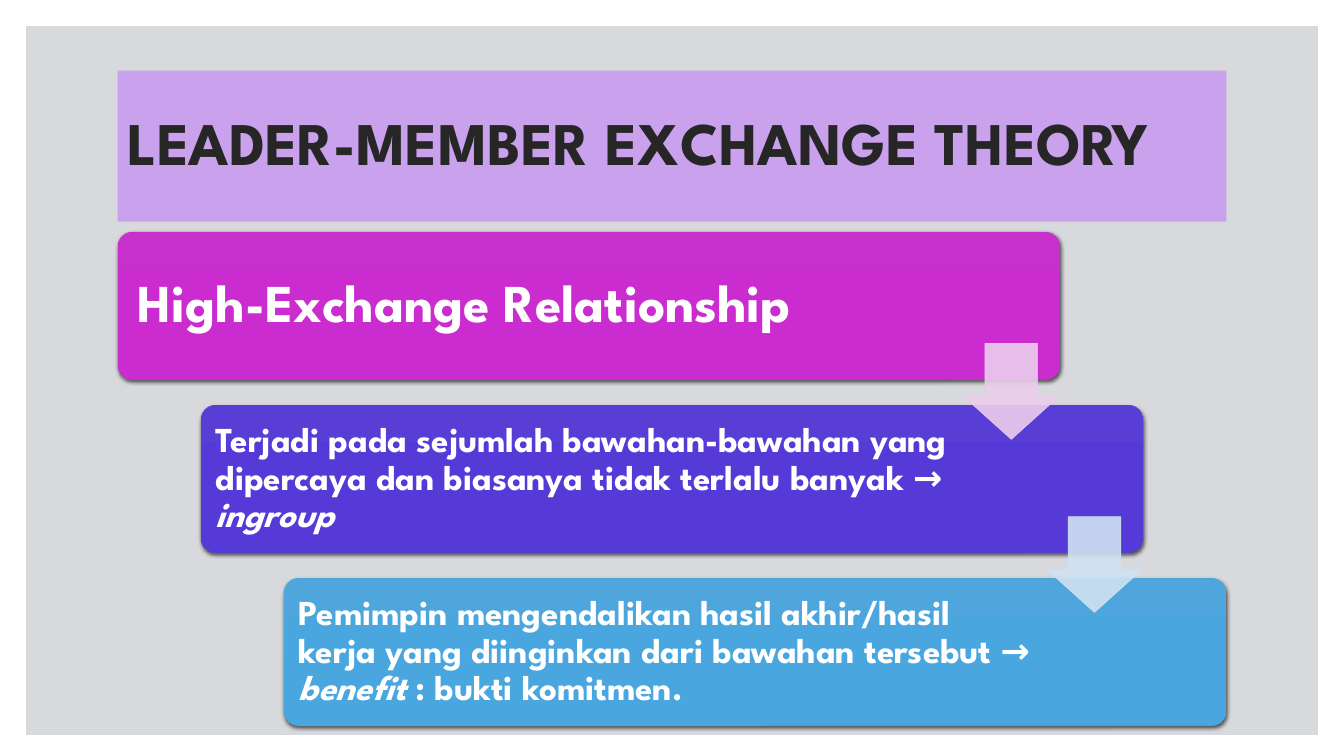
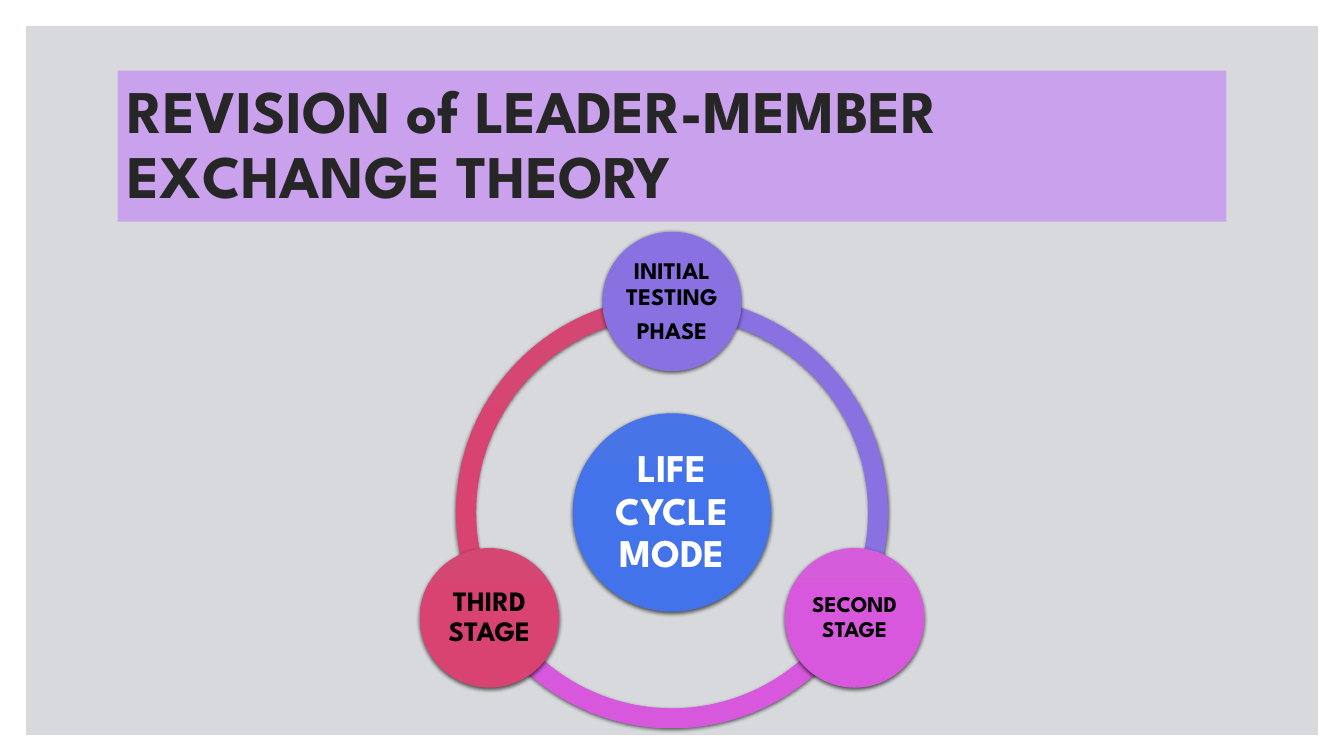
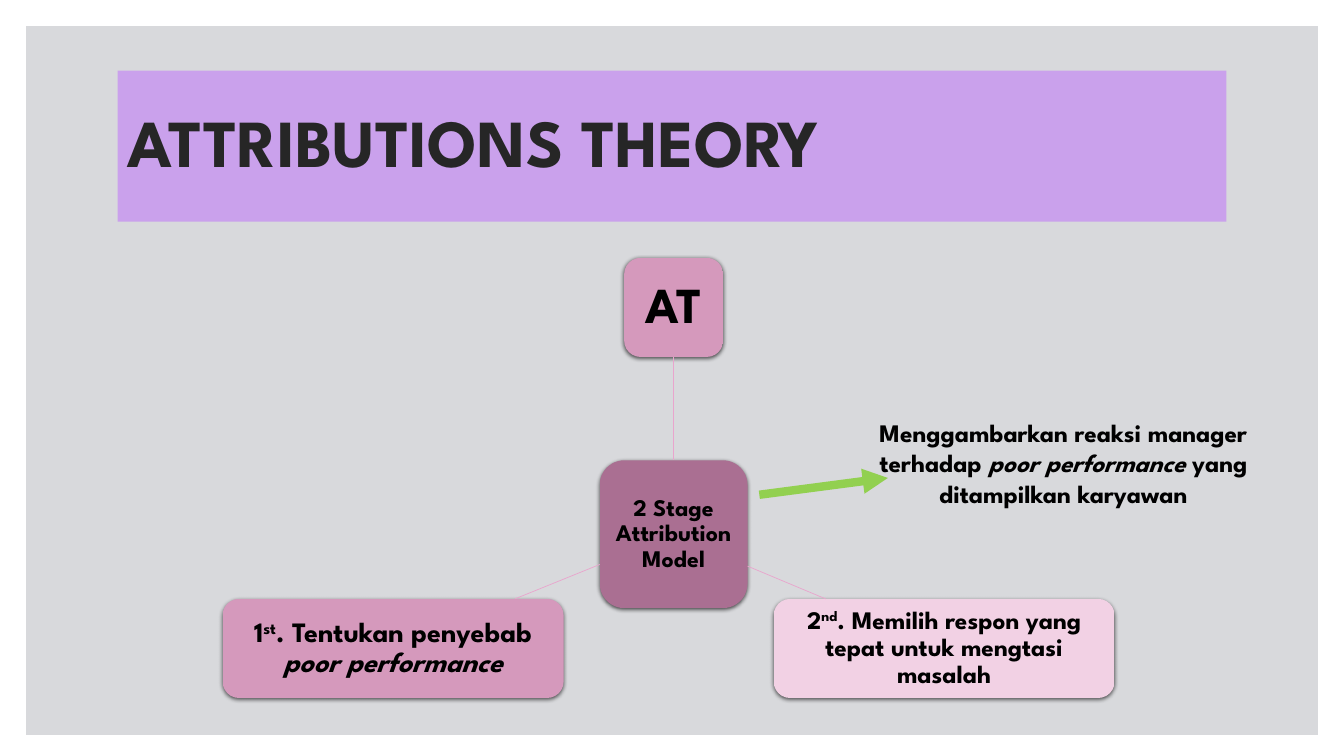
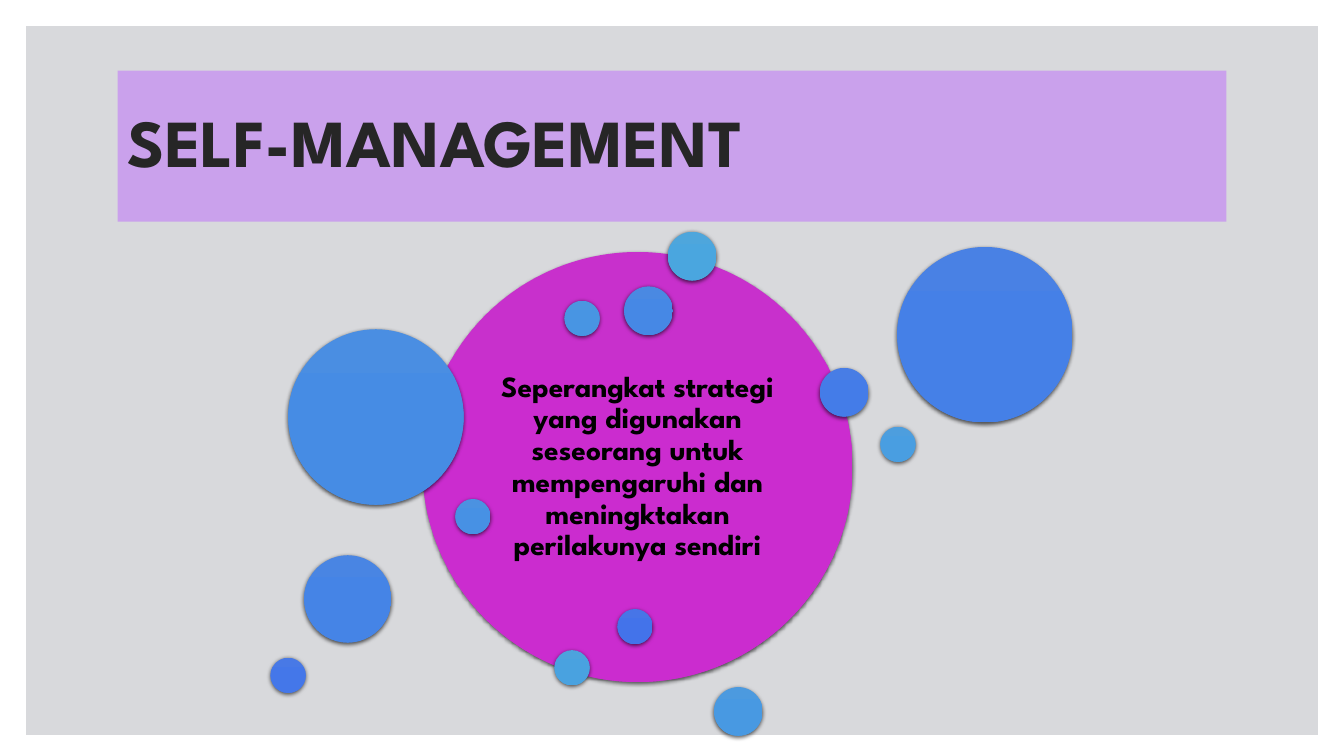
from math import cos, radians, sin

from lxml.etree import SubElement
from pptx import Presentation
from pptx.dml.color import RGBColor
from pptx.enum.shapes import MSO_CONNECTOR as Connector, MSO_SHAPE as Shape
from pptx.enum.text import MSO_ANCHOR as Anchor, PP_ALIGN as Align
from pptx.oxml.ns import qn
from pptx.util import Inches, Pt

FONT = "League Spartan"
COLUMNS, ROWS = 160, 90
BLANK_LAYOUT = 6

COLORS = {
    "panel": "D8D9DC",
    "title_band": "CAA1EC",
    "title_text": "262626",
    "white": "FFFFFF",
    "black": "000000",
    "pink_line": "E9A5CD",
    "green": "92D050",
    "pale_magenta": "EBCDEC",
    "pale_blue": "D0E1F2",
}

# Top colour and the colour from the middle down.
GRADIENTS = {
    "magenta": ("C830CC", "CB2CCF"),
    "indigo": ("593ED5", "563AD8"),
    "sky": ("4EA6DC", "4AA6DF"),
    "blue": ("4775E7", "4373EA"),
    "violet": ("8971E1", "876EE3"),
    "orchid": ("D55CDB", "D758DD"),
    "red": ("D54773", "D84371"),
    "plum": ("AA6F92", "AB6D92"),
    "rose": ("D599BC", "D697BB"),
    "blush": ("F2D1E4", "F2CFE3"),
}


def blend(first, last, share):
    """Return the hex colour that lies the given share of the way from first to last."""
    pairs = zip(RGBColor.from_string(first), RGBColor.from_string(last))
    return str(RGBColor(*(round(a + (b - a) * share) for a, b in pairs)))


class Deck:
    """Holds the style and the current slide; lengths are grid columns and rows."""

    def __init__(self):
        self.presentation = Presentation()
        self.presentation.slide_width = Inches(13.33)
        self.presentation.slide_height = Inches(7.5)
        self.column = self.presentation.slide_width / COLUMNS
        self.row = self.presentation.slide_height / ROWS
        self.slide = None

    def place(self, left, top, width, height):
        return (round(left * self.column), round(top * self.row),
                round(width * self.column), round(height * self.row))

    def new_slide(self, title, size):
        layout = self.presentation.slide_layouts[BLANK_LAYOUT]
        self.slide = self.presentation.slides.add_slide(layout)
        self.flat(Shape.RECTANGLE, (3.1, 3.1, 153.8, 84.4), "panel")
        band = self.flat(Shape.RECTANGLE, (14, 8.4, 132, 18), "title_band")
        self.add_text(band, [[title]], size, "title_text", Align.LEFT)

    def shape(self, kind, box, adjustments=()):
        shape = self.slide.shapes.add_shape(kind, *self.place(*box))
        for index, value in enumerate(adjustments):
            shape.adjustments[index] = value
        shape.shadow.inherit = False
        shape.line.fill.background()
        return shape

    def flat(self, kind, box, color, adjustments=()):
        shape = self.shape(kind, box, adjustments)
        shape.fill.solid()
        shape.fill.fore_color.rgb = RGBColor.from_string(COLORS[color])
        return shape

    def glossy(self, kind, box, gradient, adjustments=()):
        """Add a shape with a vertical gradient and a soft shadow."""
        shape = self.shape(kind, box, adjustments)
        shape.fill.gradient()
        shape.fill.gradient_angle = 270
        for stop, color, position in zip(shape.fill.gradient_stops, gradient, (0, 0.5)):
            stop.color.rgb = RGBColor.from_string(color)
            stop.position = position
        effects = shape._element.spPr.find(qn("a:effectLst"))
        shadow = SubElement(effects, qn("a:outerShdw"), blurRad=str(int(Pt(3))),
                            dist=str(int(Pt(1))), dir="5400000", rotWithShape="0")
        color = SubElement(shadow, qn("a:srgbClr"), val=COLORS["black"])
        SubElement(color, qn("a:alpha"), val="63000")
        return shape

    def circle(self, center, diameter, gradient):
        left, top = (middle - diameter / 2 for middle in center)
        return self.glossy(Shape.OVAL, (left, top, diameter, diameter), gradient)

    def down_arrow(self, left, top, size, color):
        arrow = self.flat(Shape.DOWN_ARROW, (left, top, size, size), color, (0.55, 0.45))
        arrow.line.color.rgb = RGBColor.from_string(COLORS[color])
        arrow.line.width = Pt(0.5)
        for element in list(arrow._element.spPr.iter(qn("a:srgbClr"))):
            SubElement(element, qn("a:alpha"), val="90000")

    def connector(self, start, end, color, width, arrowhead=False):
        left, top, right, bottom = self.place(*start, *end)
        line = self.slide.shapes.add_connector(Connector.STRAIGHT, left, top, right, bottom)
        line.line.color.rgb = RGBColor.from_string(COLORS[color])
        line.line.width = Pt(width)
        properties = line._element.spPr
        if arrowhead:
            SubElement(properties.find(qn("a:ln")), qn("a:tailEnd"), type="triangle")
        SubElement(properties, qn("a:effectLst"))
        return line

    def note(self, box, paragraphs, size):
        text_box = self.slide.shapes.add_textbox(*self.place(*box))
        self.add_text(text_box, paragraphs, size, "black", line_spacing=1, anchor=Anchor.TOP)

    def add_text(self, shape, paragraphs, size, color, align=Align.CENTER, inset=None,
                 right_gap=0, line_spacing=0.9, anchor=Anchor.MIDDLE):
        """Fill a shape with text; a run is a string or a (string, style) pair.

        The inset is a share of the text size, right_gap extra columns on the right.
        """
        frame = shape.text_frame
        frame.word_wrap = True
        frame.vertical_anchor = anchor
        if inset is not None:
            margin = Pt(inset * size)
            frame.margin_left = frame.margin_top = frame.margin_bottom = margin
            frame.margin_right = margin + round(right_gap * self.column)
        for index, runs in enumerate(paragraphs):
            paragraph = frame.add_paragraph() if index else frame.paragraphs[0]
            paragraph.alignment = align
            paragraph.line_spacing = line_spacing
            paragraph.space_after = Pt(0.35 * size)
            for item in runs:
                text, style = (item, "") if isinstance(item, str) else item
                run = paragraph.add_run()
                run.text = text
                run.font.name = FONT
                run.font.size = Pt(size)
                run.font.bold = True
                run.font.italic = style == "italic"
                run.font.color.rgb = RGBColor.from_string(COLORS[color])
                if style == "superscript":
                    run.font._element.set("baseline", "30000")


def exchange_slide(deck):
    deck.new_slide("LEADER-MEMBER EXCHANGE THEORY", 43.2)
    step_right, step_down = 9.9, 20.6
    steps = [
        ("magenta", 38, 18, ["High-Exchange Relationship"]),
        ("indigo", 25, 21.5, ["Terjadi pada sejumlah bawahan-bawahan yang dipercaya dan "
                              "biasanya tidak terlalu banyak → ", ("ingroup", "italic")]),
        ("sky", 25, 21.5, ["Pemimpin mengendalikan hasil akhir/hasil kerja yang diinginkan "
                           "dari bawahan tersebut → ", ("benefit ", "italic"),
                           ": bukti komitmen."]),
    ]
    for index, (gradient, size, right_gap, runs) in enumerate(steps):
        box = (14 + index * step_right, 27.6 + index * step_down, 112.2, 17.6)
        step = deck.glossy(Shape.ROUNDED_RECTANGLE, box, GRADIENTS[gradient], (0.1,))
        deck.add_text(step, [runs], size, "white", Align.LEFT, 0.3, right_gap)
    for index, color in enumerate(("pale_magenta", "pale_blue")):
        deck.down_arrow(114.7 + index * step_right, 40.9 + index * step_down, 11.4, color)


def life_cycle_slide(deck):
    deck.new_slide("REVISION of LEADER-MEMBER EXCHANGE THEORY", 43.2)
    center_x, center_y = 80, 61
    ring, orbit, turn = 51.4, 25.1, 120
    stages = [
        (270, "violet", 17, [["INITIAL TESTING"], ["PHASE"]]),
        (30, "orchid", 16, [["SECOND STAGE"]]),
        (150, "red", 20, [["THIRD STAGE"]]),
    ]
    ring_box = (center_x - ring / 2, center_y - ring / 2, ring, ring)
    for angle, gradient, _, _ in reversed(stages):
        # Adjustments count 100000ths, angles 60000ths of a degree.
        ends = (angle * 0.6, (angle + turn) % 360 * 0.6)
        deck.glossy(Shape.BLOCK_ARC, ring_box, GRADIENTS[gradient], (*ends, 0.046))
    hub = deck.circle((center_x, center_y), 23.6, GRADIENTS["blue"])
    deck.add_text(hub, [["LIFE CYCLE MODE"]], 28, "white", inset=0.1)
    for angle, gradient, size, paragraphs in stages:
        center = (center_x + orbit * cos(radians(angle)),
                  center_y + orbit * sin(radians(angle)))
        stage = deck.circle(center, 16.6, GRADIENTS[gradient])
        deck.add_text(stage, paragraphs, size, "black", inset=0.1)


def attribution_slide(deck):
    deck.new_slide("ATTRIBUTIONS THEORY", 48)
    boxes = [
        ((71.4, 54.8, 17.6, 17.6), "plum", 17, ["2 Stage Attribution Model"]),
        ((74.3, 30.7, 11.8, 11.8), "rose", 36, ["AT"]),
        ((92.1, 71.3, 40.6, 11.8), "blush", 18,
         ["2", ("nd", "superscript"), ". Memilih respon yang tepat untuk mengtasi masalah"]),
        ((26.5, 71.3, 40.6, 11.8), "rose", 20,
         ["1", ("st", "superscript"), ". Tentukan penyebab ", ("poor performance", "italic")]),
    ]
    shapes = []
    for box, gradient, size, runs in boxes:
        shape = deck.glossy(Shape.ROUNDED_RECTANGLE, box, GRADIENTS[gradient])
        deck.add_text(shape, [runs], size, "black", inset=0.21)
        shapes.append(shape)
    model, theory = shapes[:2]
    stem = deck.connector((80.2, 42.5), (80.2, 54.8), "pink_line", 0.5)
    stem.begin_connect(theory, 2)
    stem.end_connect(model, 0)
    deck.connector((89, 67.4), (98.3, 71.3), "pink_line", 0.5)
    deck.connector((71.4, 67.2), (61.3, 71.3), "pink_line", 0.5)
    deck.note((102.7, 49.1, 47.8, 15.7),
              [["Menggambarkan reaksi manager terhadap ", ("poor performance ", "italic"),
                "yang ditampilkan karyawan"]], 18)
    deck.connector((90.4, 58.9), (105.7, 56.9), "green", 6, arrowhead=True)


def self_management_slide(deck):
    deck.new_slide("SELF-MANAGEMENT", 48)
    core = deck.circle((75.9, 55.6), 51.2, GRADIENTS["magenta"])
    deck.add_text(core, [["Seperangkat strategi yang digunakan seseorang untuk mempengaruhi "
                          "dan meningktakan perilakunya sendiri"]], 21, "black", inset=0.3)
    tiny, small, medium, large = 4.2, 5.8, 10.4, 20.9
    bubbles = [
        (79.5, 27.6, small), (66, 77.4, tiny), (104.8, 50.8, tiny), (85, 81.8, small),
        (67.2, 35.8, tiny), (54.2, 59.4, tiny), (34.3, 39.2, large), (74.3, 34.1, small),
        (36.2, 66.1, medium), (106.8, 29.4, large), (97.6, 43.8, small),
        (32.2, 78.3, tiny), (73.5, 72.5, tiny),
    ]
    for index, (left, top, diameter) in enumerate(bubbles):
        share = index / (len(bubbles) - 1)
        gradient = [blend(first, last, share)
                    for first, last in zip(GRADIENTS["sky"], GRADIENTS["blue"])]
        deck.glossy(Shape.OVAL, (left, top, diameter, diameter), gradient)


def main():
    deck = Deck()
    exchange_slide(deck)
    life_cycle_slide(deck)
    attribution_slide(deck)
    self_management_slide(deck)
    deck.presentation.save("out.pptx")


if __name__ == "__main__":
    main()
